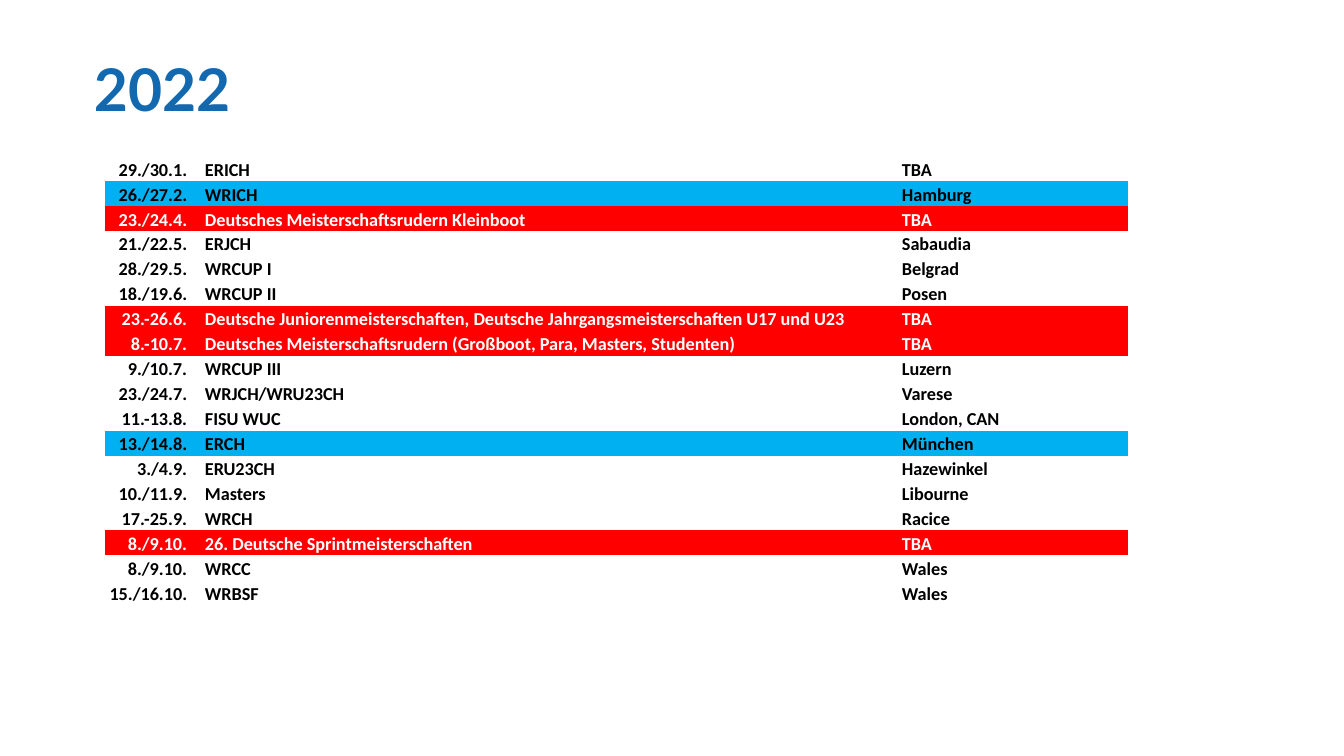
"""Build the 2022 rowing calendar slide."""
from dataclasses import dataclass

from lxml import etree
from pptx import Presentation
from pptx import util as u
from pptx.dml.color import RGBColor
from pptx.enum import text
from pptx.oxml.ns import qn

BLACK, WHITE, BLUE, RED = "000000", "FFFFFF", "00B0F0", "FF0000"
TITLE = "1369B0"
PLAIN = "{2D5ABB26-0587-4C30-8999-92F81FD0307C}"
COLS = (83, 16, 697, 227)
ROW = 25


@dataclass(frozen=True)
class Event:
    """One dated race with its place and row colours."""
    date: str
    name: str
    place: str
    fill: str = WHITE
    ink: str = BLACK


def home(date: str, name: str) -> Event:
    """Return a national race whose place is still open."""
    return Event(date, name, "TBA", RED, WHITE)


EVENTS = (
    Event("29./30.1.", "ERICH", "TBA"),
    Event("26./27.2.", "WRICH", "Hamburg", BLUE),
    home("23./24.4.", "Deutsches Meisterschaftsrudern Kleinboot"),
    Event("21./22.5.", "ERJCH", "Sabaudia"),
    Event("28./29.5.", "WRCUP I", "Belgrad"),
    Event("18./19.6.", "WRCUP II", "Posen"),
    home("23.-26.6.", "Deutsche Juniorenmeisterschaften, "
         "Deutsche Jahrgangsmeisterschaften U17 und U23"),
    home("8.-10.7.", "Deutsches Meisterschaftsrudern "
         "(Großboot, Para, Masters, Studenten)"),
    Event("9./10.7.", "WRCUP III", "Luzern"),
    Event("23./24.7.", "WRJCH/WRU23CH", "Varese"),
    Event("11.-13.8.", "FISU WUC", "London, CAN"),
    Event("13./14.8.", "ERCH", "München", BLUE),
    Event("3./4.9.", "ERU23CH", "Hazewinkel"),
    Event("10./11.9.", "Masters", "Libourne"),
    Event("17.-25.9.", "WRCH", "Racice"),
    home("8./9.10.", "26. Deutsche Sprintmeisterschaften"),
    Event("8./9.10.", "WRCC", "Wales"),
    Event("15./16.10.", "WRBSF", "Wales"),
)


def px(n: int) -> u.Emu:
    """Turn px into EMU."""
    return u.Emu(round(n * 914400 / 100.8))


def rgb(code: str) -> RGBColor:
    """Turn a hex string into a colour."""
    return RGBColor.from_string(code)


def write(frame, words: str, *, size: int, face: str, ink: str,
          right: bool = False, space: float = 1.0) -> None:
    """Write one bold paragraph, or size an empty one."""
    para = frame.paragraphs[0]
    if not words:
        end = etree.SubElement(para._p, qn("a:endParaRPr"))
        end.set("sz", str(size * 100))
        return
    para.alignment = text.PP_ALIGN.RIGHT if right else text.PP_ALIGN.LEFT
    para.line_spacing = space
    run = para.add_run()
    run.text = words
    font = run.font
    font.size, font.name, font.bold = u.Pt(size), face, True
    font.color.rgb = rgb(ink)


def head(slide) -> None:
    """Add the year as the heading."""
    box = slide.shapes.add_textbox(px(84), px(36), px(981), px(113))
    frame = box.text_frame
    frame.word_wrap = True
    frame.vertical_anchor = text.MSO_ANCHOR.MIDDLE
    write(frame, "2022", size=42, face="Lato", ink=TITLE, space=0.9)


def fill(cell, words: str, event: Event, right: bool) -> None:
    """Colour one table cell and write its words."""
    cell.fill.solid()
    cell.fill.fore_color.rgb = rgb(event.fill)
    cell.vertical_anchor = text.MSO_ANCHOR.BOTTOM
    cell.margin_left = cell.margin_right = cell.margin_top = px(1)
    cell.margin_bottom = 0
    write(cell.text_frame, words, size=13, face="Calibri", ink=event.ink,
          right=right)


def plan(slide) -> None:
    """Add the table of races."""
    grid = slide.shapes.add_table(
        len(EVENTS), len(COLS), px(105), px(156),
        px(sum(COLS)), px(ROW * len(EVENTS))).table
    grid.first_row = grid.horz_banding = False
    grid._tbl.tblPr.find(qn("a:tableStyleId")).text = PLAIN
    for col, wide in zip(grid.columns, COLS):
        col.width = px(wide)
    for row, event in zip(grid.rows, EVENTS):
        row.height = px(ROW)
        items = (event.date, "", event.name, event.place)
        for i, (cell, words) in enumerate(zip(row.cells, items)):
            fill(cell, words, event, right=i == 0)


def main() -> None:
    """Build and save the slide."""
    deck = Presentation()
    deck.slide_width, deck.slide_height = px(1344), px(756)
    slide = deck.slides.add_slide(deck.slide_layouts[6])
    head(slide)
    plan(slide)
    deck.save("out.pptx")


if __name__ == "__main__":
    main()
